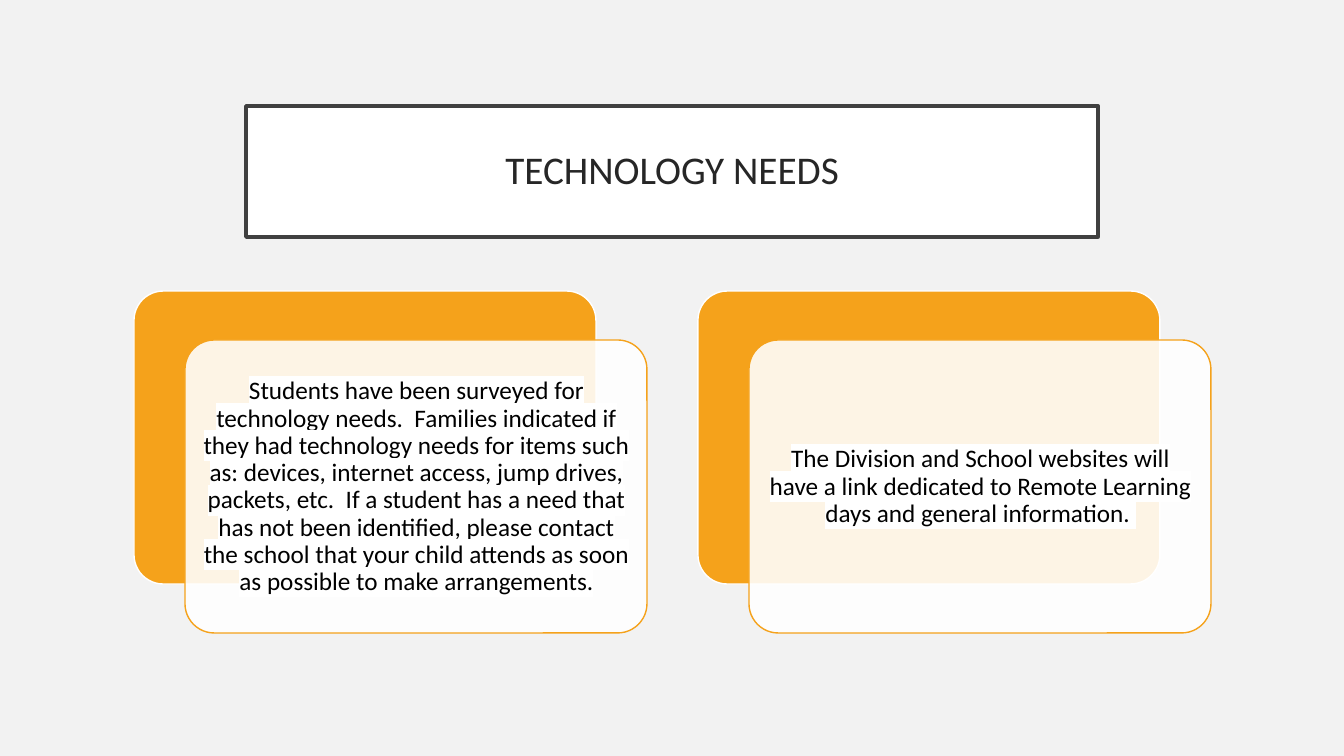
from lxml import etree
from pptx import Presentation
from pptx.dml.color import RGBColor
from pptx.enum.shapes import MSO_SHAPE
from pptx.enum.text import MSO_ANCHOR, PP_ALIGN
from pptx.oxml.ns import qn
from pptx.util import Emu, Pt

RECTANGLE, ROUNDED = MSO_SHAPE.RECTANGLE, MSO_SHAPE.ROUNDED_RECTANGLE
MIDDLE, CENTER = MSO_ANCHOR.MIDDLE, PP_ALIGN.CENTER
PX = 914400 / 100.8
WHITE, ORANGE = "FFFFFF", "F5A21B"
color = RGBColor.from_string


def add_panel(kind, bounds, fill, line, width):
    panel = page.shapes.add_shape(kind, *[Emu(round(n * PX)) for n in bounds])
    panel.shadow.inherit = False
    panel.fill.solid()
    panel.fill.fore_color.rgb = color(fill)
    panel.line.color.rgb = color(line)
    panel.line.width = Pt(width)
    if kind == ROUNDED:
        panel.adjustments[0] = 0.1
    return panel


def write_text(box, text, size, ink, inset):
    frame = box.text_frame
    frame.word_wrap = True
    frame.vertical_anchor = MIDDLE
    frame.margin_left = frame.margin_right = Emu(round(inset * PX))
    frame.margin_top = frame.margin_bottom = Emu(round(inset * PX))
    para = frame.paragraphs[0]
    para.alignment = CENTER
    para.line_spacing = 0.9
    para.font.size = Pt(size)
    para.font.name = "Calibri"
    para.font.color.rgb = color(ink)
    span = para.add_run()
    span.text = text
    return span


deck = Presentation()
deck.slide_width, deck.slide_height = Emu(round(1344 * PX)), Emu(round(756 * PX))
page = deck.slides.add_slide(deck.slide_layouts[6])
page.background.fill.solid()
page.background.fill.fore_color.rgb = color("F2F2F2")

# Title
title = add_panel(RECTANGLE, (246, 106, 852, 131), WHITE, "404040", 2.5)
write_text(title, "TECHNOLOGY NEEDS", 28, "262626", 20)

# Two cards, each an orange panel behind a translucent white one
messages = [
    "Students have been surveyed for technology needs.  Families indicated if they had "
    "technology needs for items such as: devices, internet access, jump drives, packets, "
    "etc.  If a student has a need that has not been identified, please contact the "
    "school that your child attends as soon as possible to make arrangements.",
    "The Division and School websites will have a link dedicated to Remote Learning days "
    "and general information. ",
]
for index, message in enumerate(messages):
    left, top = 134 + 564 * index, 291
    add_panel(ROUNDED, (left, top, 462, 293), ORANGE, WHITE, 1)
    card = add_panel(ROUNDED, (left + 51, top + 49, 462, 293), WHITE, ORANGE, 1)
    card_color = card.fill._xPr.find(qn("a:solidFill"))[0]
    etree.SubElement(card_color, qn("a:alpha")).set("val", "89000")

    bounds = (left + 60, top + 58, 445, 276)
    box = page.shapes.add_textbox(*[Emu(round(n * PX)) for n in bounds])
    span = write_text(box, message, 18, "000000", 7)

    # White highlight behind the words
    highlight = etree.SubElement(span._r.get_or_add_rPr(), qn("a:highlight"))
    etree.SubElement(highlight, qn("a:srgbClr")).set("val", WHITE)

deck.save("out.pptx")
